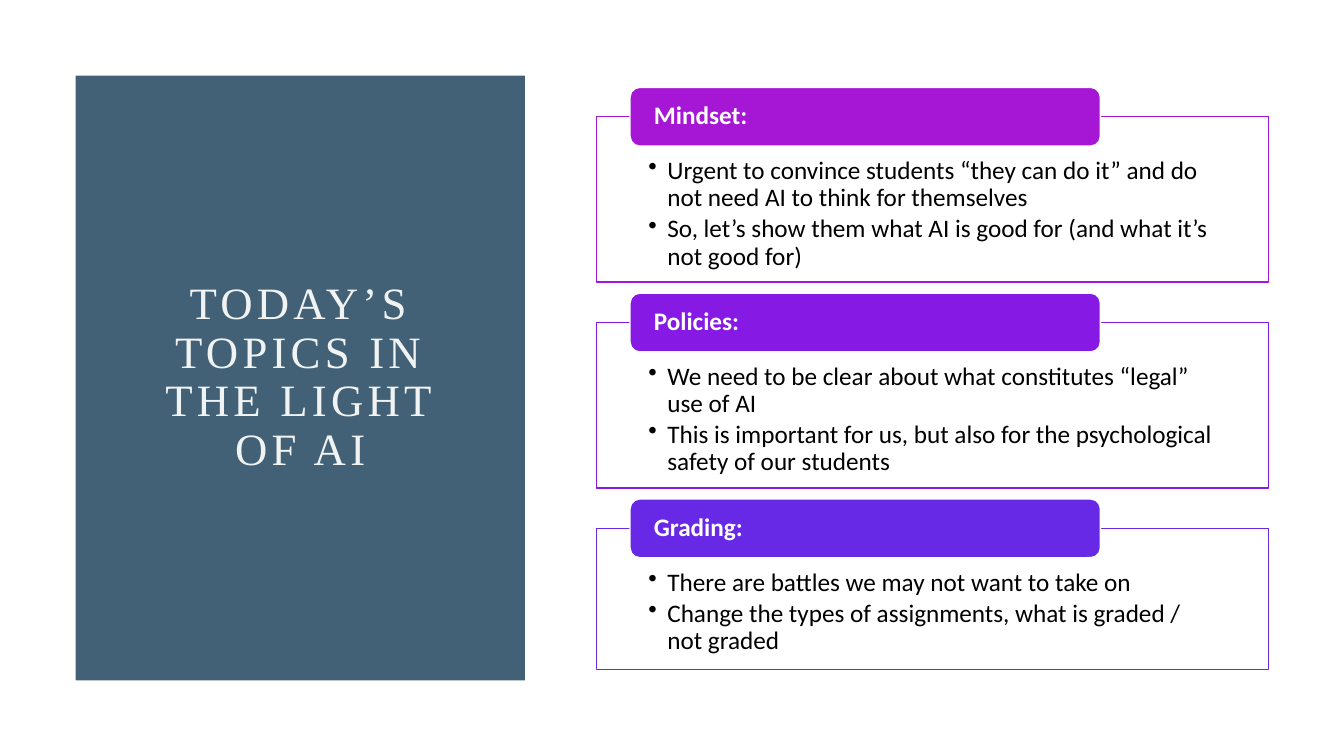
from dataclasses import dataclass

from lxml import etree
from pptx import Presentation
from pptx import util as u
from pptx.dml.color import RGBColor
from pptx.enum import shapes, text
from pptx.oxml.ns import qn
from pptx.shapes.autoshape import Shape
from pptx.slide import Slide

# Grid: 160 columns by 90 rows of square cells
WIDTH, HEIGHT = u.Inches(13.333), u.Inches(7.5)
CELL = HEIGHT / 90
STEP = 24.5  # rows from one topic to the next
WHITE = "FFFFFF"
Box = tuple[float, float, float, float]


@dataclass
class Topic:
    name: str
    color: str
    rows: float
    points: list[str]


TOPICS = [
    Topic("Mindset:", "A517D5", 19.7, [
        "Urgent to convince students “they can do it” and do not need AI to think for themselves",
        "So, let’s show them what AI is good for (and what it’s not good for)",
    ]),
    Topic("Policies:", "8719E5", 19.7, [
        "We need to be clear about what constitutes “legal” use of AI",
        "This is important for us, but also for the psychological safety of our students",
    ]),
    Topic("Grading:", "6829E7", 16.8, [
        "There are battles we may not want to take on",
        "Change the types of assignments, what is graded / not graded",
    ]),
]


def grid(cells: float) -> u.Emu:
    return u.Emu(round(cells * CELL))


def paint(color: str) -> RGBColor:
    return RGBColor.from_string(color)


def block(slide: Slide, kind: shapes.MSO_SHAPE, box: Box, fill: str, line: str = "") -> Shape:
    shape = slide.shapes.add_shape(kind, *map(grid, box))
    shape.shadow.inherit = False
    shape.fill.solid()
    shape.fill.fore_color.rgb = paint(fill)
    if line:
        shape.line.color.rgb = paint(line)
        shape.line.width = u.Pt(1)
    else:
        shape.line.fill.background()
    return shape


def write(shape: Shape, lines: list[str], color: str, pad: Box, anchor: text.MSO_ANCHOR,
          size: float = 18, font: str = "Calibri", bold: bool = False, after: float = 0,
          align: text.PP_ALIGN = text.PP_ALIGN.LEFT) -> None:
    frame = shape.text_frame
    frame.word_wrap = True
    frame.vertical_anchor = anchor
    frame.margin_left, frame.margin_top, frame.margin_right, frame.margin_bottom = map(grid, pad)
    frame.text = "\n".join(lines)
    for para in frame.paragraphs:
        para.alignment = align
        para.line_spacing = 0.9
        para.space_after = u.Pt(after)
        para.font.size = u.Pt(size)
        para.font.name = font
        para.font.bold = bold
        para.font.color.rgb = paint(color)


def bullet(shape: Shape) -> None:
    for para in shape.text_frame.paragraphs:
        props = para._p.get_or_add_pPr()
        props.set("marL", str(grid(2.25)))
        props.set("indent", str(-grid(2.25)))
        mark = etree.Element(qn("a:buChar"), char="•")
        props.find(qn("a:defRPr")).addprevious(mark)


def panel(slide: Slide) -> None:
    block(slide, shapes.MSO_SHAPE.RECTANGLE, (9, 9, 53.5, 72), "426177")
    title = slide.shapes.add_textbox(*map(grid, (18, 18, 35.5, 54)))
    write(title, ["TODAY’S TOPICS IN THE LIGHT OF AI"], "F0F3F1", (1.2, 0.6, 1.2, 0.6),
          text.MSO_ANCHOR.MIDDLE, 32, "Times New Roman", align=text.PP_ALIGN.CENTER)
    # Letter spacing in hundredths of a point
    title.text_frame.paragraphs[0].runs[0]._r.get_or_add_rPr().set("spc", "300")


def card(slide: Slide, topic: Topic, top: float) -> None:
    # Framed body with bullets
    body = block(slide, shapes.MSO_SHAPE.RECTANGLE, (71, top, 80, topic.rows), WHITE, topic.color)
    tint = body._element.spPr.find(qn("a:solidFill"))[0]
    etree.SubElement(tint, qn("a:alpha"), val="90000")
    write(body, topic.points, "000000", (6.2, 4.9, 6.2, 1.7), text.MSO_ANCHOR.TOP, after=2.7)
    bullet(body)
    # Heading tab over the top edge
    tab = block(slide, shapes.MSO_SHAPE.ROUNDED_RECTANGLE, (75, top - 3.5, 56, 7), topic.color, WHITE)
    write(tab, [topic.name], WHITE, (2.5, 0, 2.5, 0), text.MSO_ANCHOR.MIDDLE, bold=True)


def main() -> None:
    deck = Presentation()
    deck.slide_width, deck.slide_height = WIDTH, HEIGHT
    slide = deck.slides.add_slide(deck.slide_layouts[6])
    panel(slide)
    for row, topic in enumerate(TOPICS):
        card(slide, topic, 13.9 + row * STEP)
    deck.save("out.pptx")


if __name__ == "__main__":
    main()
